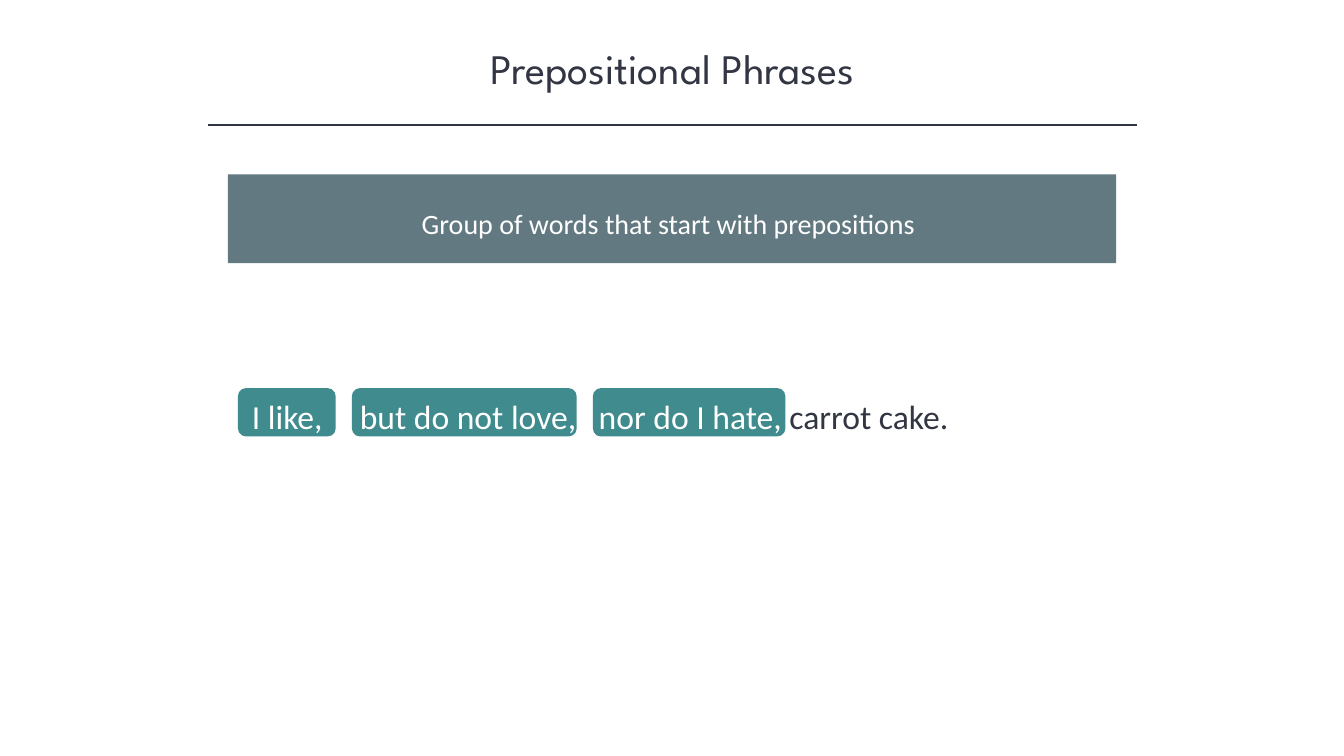
from lxml import etree
from pptx import Presentation
from pptx.dml.color import RGBColor
from pptx.enum.shapes import MSO_CONNECTOR, MSO_SHAPE
from pptx.enum.text import MSO_ANCHOR, MSO_AUTO_SIZE, PP_ALIGN
from pptx.oxml.ns import qn
from pptx.util import Inches, Pt

INK = RGBColor(0x32, 0x35, 0x42)
SLATE = RGBColor(0x62, 0x79, 0x81)
TEAL = RGBColor(0x3F, 0x8B, 0x8D)
WHITE = RGBColor(0xFF, 0xFF, 0xFF)
HEADING_FONT, BODY_FONT = "League Spartan", "Calibri"
RECTANGLE, ROUNDED = MSO_SHAPE.RECTANGLE, MSO_SHAPE.ROUNDED_RECTANGLE
STRAIGHT = MSO_CONNECTOR.STRAIGHT
LEFT, CENTER = PP_ALIGN.LEFT, PP_ALIGN.CENTER
TOP, MIDDLE = MSO_ANCHOR.TOP, MSO_ANCHOR.MIDDLE
GROW = MSO_AUTO_SIZE.SHAPE_TO_FIT_TEXT


class SlideBuilder:
    def __init__(self, slide):
        self.shapes = slide.shapes

    def block(self, kind, left, top, width, height, color):
        shape = self.shapes.add_shape(
            kind, Inches(left), Inches(top), Inches(width), Inches(height))
        shape.shadow.inherit = False
        shape.fill.solid()
        shape.fill.fore_color.rgb = color
        shape.line.fill.background()
        return shape

    def rule(self, left, right, y):
        line = self.shapes.add_connector(
            STRAIGHT, Inches(left), Inches(y), Inches(right), Inches(y))
        line.line.color.rgb = INK
        line.line.width = Pt(1)
        etree.SubElement(line._element.spPr, qn("a:effectLst"))

    def text(self, left, top, width, height, spans, size,
             font=BODY_FONT, align=LEFT, anchor=TOP):
        """Add a text box whose single paragraph joins (wording, color) spans."""
        box = self.shapes.add_textbox(
            Inches(left), Inches(top), Inches(width), Inches(height))
        frame = box.text_frame
        frame.word_wrap = True
        frame.auto_size = GROW
        frame.vertical_anchor = anchor
        para = frame.paragraphs[0]
        para.alignment = align
        for wording, color in spans:
            span = para.add_run()
            span.text = wording
            span.font.name = font
            span.font.size = Pt(size)
            span.font.color.rgb = color
        return para

    def tab_stops(self, para, positions):
        tabs = etree.SubElement(para._p.get_or_add_pPr(), qn("a:tabLst"))
        for position in positions:
            etree.SubElement(tabs, qn("a:tab"), pos=str(Inches(position)), algn="l")


def main():
    deck = Presentation()
    deck.slide_width, deck.slide_height = Inches(13.33), Inches(7.5)
    page = SlideBuilder(deck.slides.add_slide(deck.slide_layouts[6]))

    page.text(1.67, 0.37, 10, 0.61, [("Prepositional Phrases", INK)], 30,
              HEADING_FONT, CENTER)
    page.rule(2.06, 11.28, 1.24)

    page.block(RECTANGLE, 2.26, 1.73, 8.81, 0.88, SLATE)
    page.text(2.36, 2, 8.54, 0.44,
              [("Group of words that start with prepositions", WHITE)], 20,
              align=CENTER)

    for left, width in ((2.36, 0.97), (3.49, 2.23), (5.88, 1.91)):
        page.block(ROUNDED, left, 3.85, width, 0.48, TEAL)
    sentence = page.text(
        2.4, 3.53, 8.54, 0.8,
        [("I like,\tbut do not love,\tnor do I hate, ", WHITE),
         ("carrot cake.", INK)], 24, anchor=MIDDLE)
    sentence.line_spacing = 2.0
    sentence.space_after = Pt(18)
    page.tab_stops(sentence, (1.07, 3.44))

    deck.save("out.pptx")


if __name__ == "__main__":
    main()
